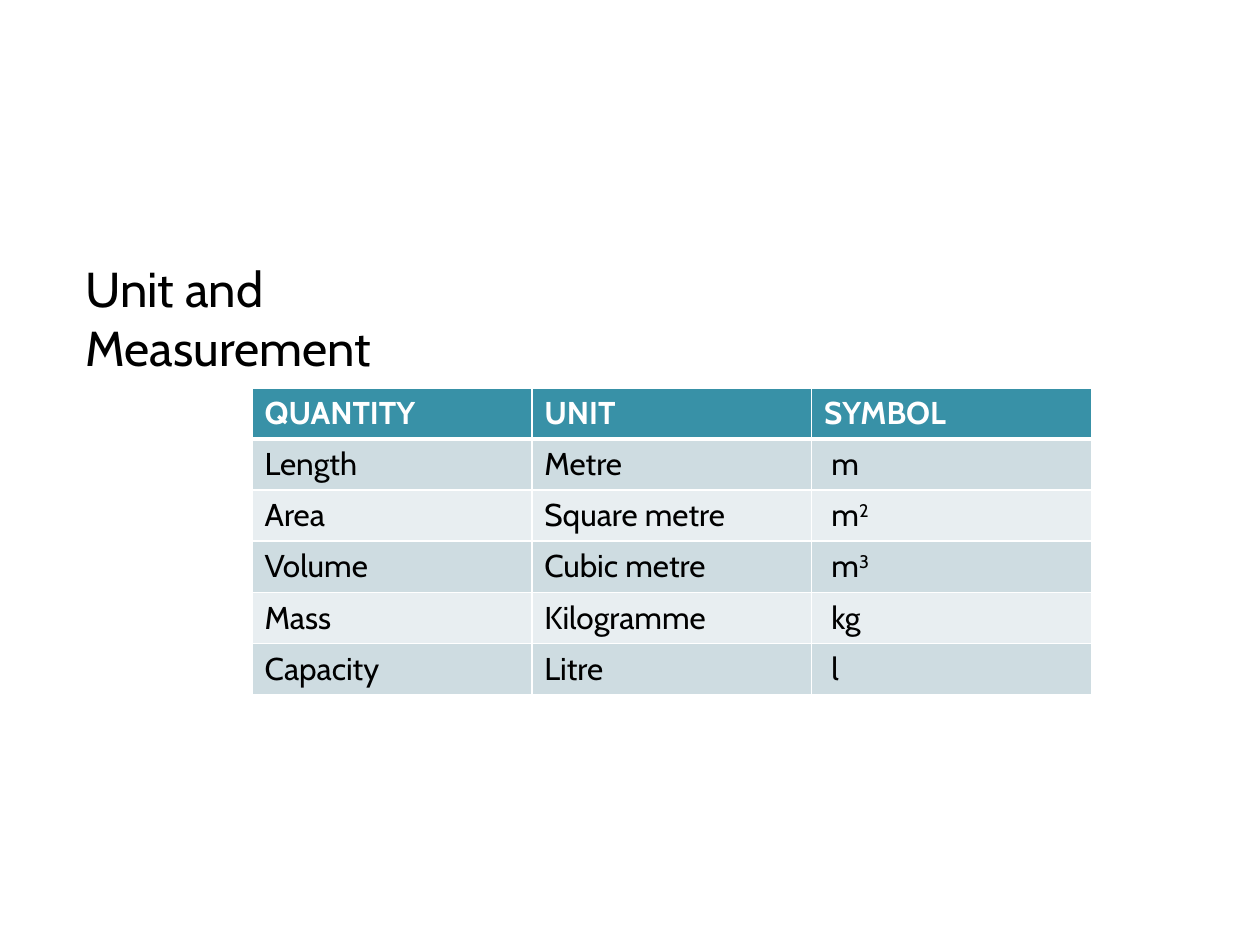
from dataclasses import dataclass

from lxml import etree
from pptx import Presentation
from pptx.dml.color import RGBColor
from pptx.enum import text
from pptx.oxml.ns import qn
from pptx.util import Cm, Pt


@dataclass(frozen=True)
class Theme:
    font: str = "Cabin"
    title_size: int = 28
    table_size: int = 18
    ink: str = "000000"
    paper: str = "FFFFFF"
    header: str = "3891A7"
    bands: tuple[str, str] = ("CEDCE1", "E8EEF1")
    rule: int = 1
    header_rule: int = 3


@dataclass(frozen=True)
class Measure:
    quantity: str
    unit: str
    symbol: str
    power: str = ""


THEME = Theme()
HEADINGS = ("QUANTITY", "UNIT", "SYMBOL")
MEASURES = (
    Measure("Length", "Metre", "m"),
    Measure("Area", "Square metre", "m", "2"),
    Measure("Volume", "Cubic metre", "m", "3"),
    Measure("Mass", "Kilogramme", "kg"),
    Measure("Capacity", "Litre", "l"),
)
COLUMN_WIDTH, ROW_HEIGHT = Cm(5.64), Cm(1.03)
SYMBOL_INDENT = Cm(0.4)


def add_run(paragraph, words: str, size: int, color: str, bold: bool = False):
    run = paragraph.add_run()
    run.text = words
    run.font.name = THEME.font
    run.font.size = Pt(size)
    run.font.bold = bold
    run.font.color.rgb = RGBColor.from_string(color)
    return run


def style_cell(cell, fill: str, top: int, bottom: int) -> None:
    """Draw the white rules first, then the fill, as the schema orders them."""
    properties = cell._tc.get_or_add_tcPr()
    sides = {"lnL": THEME.rule, "lnR": THEME.rule, "lnT": top, "lnB": bottom}
    for side, width in sides.items():
        line = etree.SubElement(properties, qn(f"a:{side}"), w=str(Pt(width)))
        solid = etree.SubElement(line, qn("a:solidFill"))
        etree.SubElement(solid, qn("a:srgbClr"), val=THEME.paper)
    cell.fill.solid()
    cell.fill.fore_color.rgb = RGBColor.from_string(fill)


def fill_header(table) -> None:
    for column, heading in enumerate(HEADINGS):
        cell = table.cell(0, column)
        style_cell(cell, THEME.header, THEME.rule, THEME.header_rule)
        add_run(cell.text_frame.paragraphs[0], heading,
                THEME.table_size, THEME.paper, bold=True)


def fill_measure(table, row: int, measure: Measure) -> None:
    top = THEME.header_rule if row == 1 else THEME.rule
    band = THEME.bands[(row - 1) % 2]
    words = (measure.quantity, measure.unit, measure.symbol)
    for column, word in enumerate(words):
        cell = table.cell(row, column)
        style_cell(cell, band, top, THEME.rule)
        add_run(cell.text_frame.paragraphs[0], word,
                THEME.table_size, THEME.ink)
    # The last cell holds the symbol, set in a little, with any power raised
    cell.margin_left = SYMBOL_INDENT
    if measure.power:
        power = add_run(cell.text_frame.paragraphs[0], measure.power,
                        THEME.table_size, THEME.ink)
        power._r.get_or_add_rPr().set("baseline", "30000")


def add_title(slide, words: str) -> None:
    title = slide.shapes.title
    title.left, title.top = Cm(1.47), Cm(5.08)
    title.width, title.height = Cm(9.75), Cm(1.45)
    frame = title.text_frame
    frame.word_wrap = True
    frame.auto_size = text.MSO_AUTO_SIZE.NONE
    frame.vertical_anchor = text.MSO_ANCHOR.TOP
    paragraph = frame.paragraphs[0]
    paragraph.alignment = text.PP_ALIGN.LEFT
    add_run(paragraph, words, THEME.title_size, THEME.ink)


def add_measure_table(slide) -> None:
    rows, columns = len(MEASURES) + 1, len(HEADINGS)
    table = slide.shapes.add_table(
        rows, columns, Cm(5.08), Cm(7.82),
        COLUMN_WIDTH * columns, ROW_HEIGHT * rows).table
    for column in table.columns:
        column.width = COLUMN_WIDTH
    for row in table.rows:
        row.height = ROW_HEIGHT
    fill_header(table)
    for row, measure in enumerate(MEASURES, start=1):
        fill_measure(table, row, measure)


def main() -> None:
    deck = Presentation()
    deck.slide_width, deck.slide_height = Cm(25.4), Cm(19.05)
    slide = deck.slides.add_slide(deck.slide_layouts.get_by_name("Title Only"))
    add_title(slide, "Unit and Measurement")
    add_measure_table(slide)
    deck.save("out.pptx")


if __name__ == "__main__":
    main()
